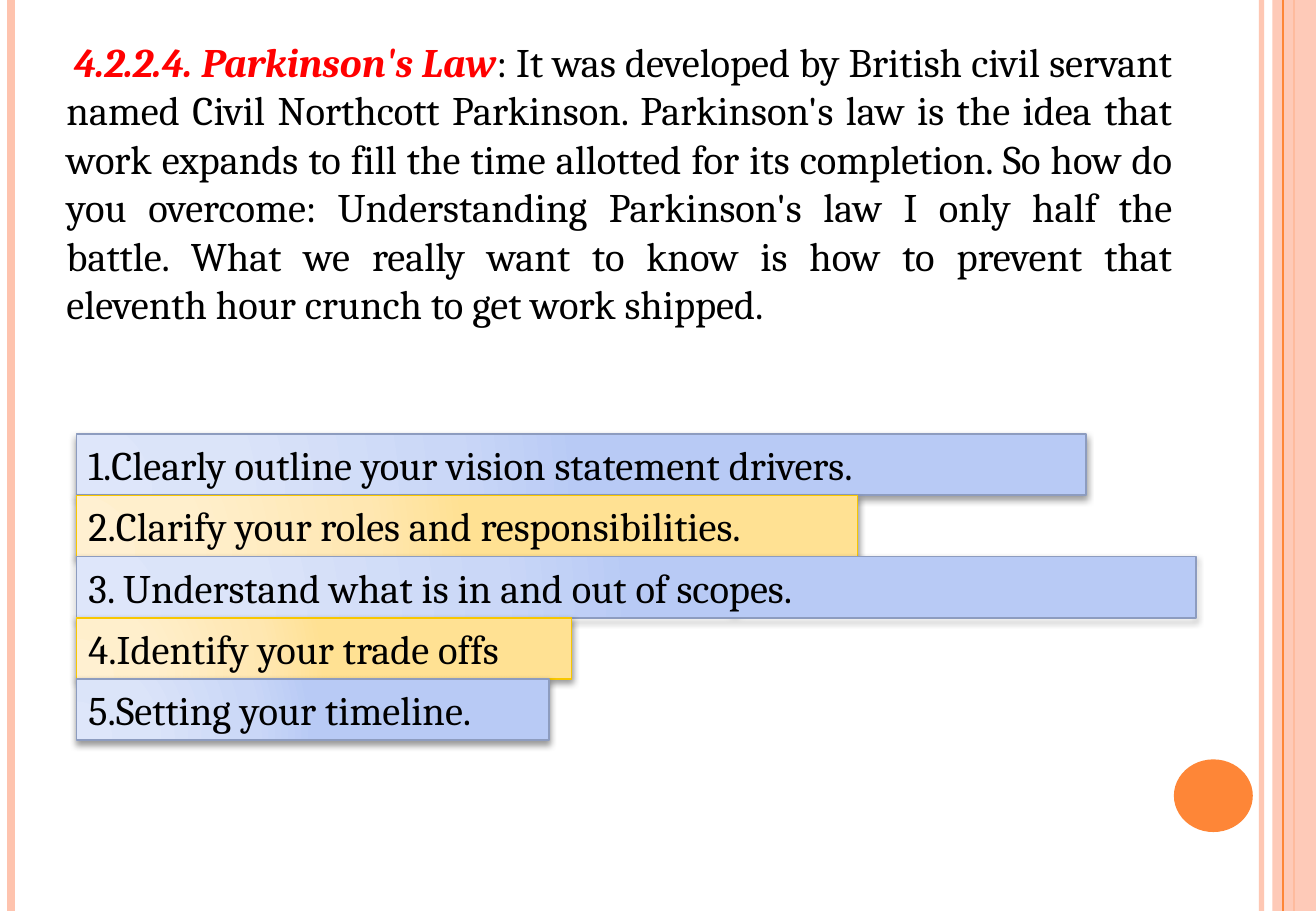
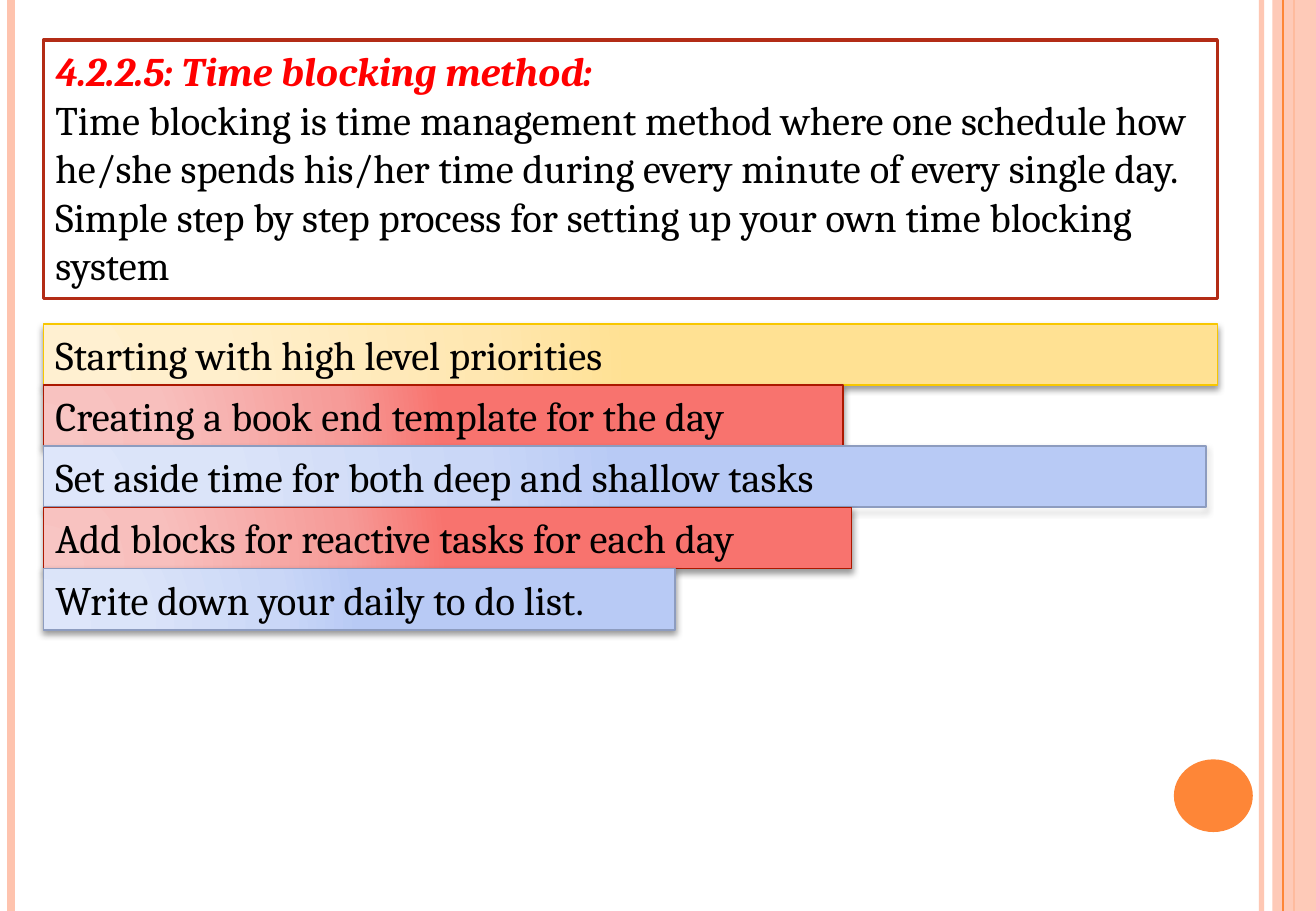
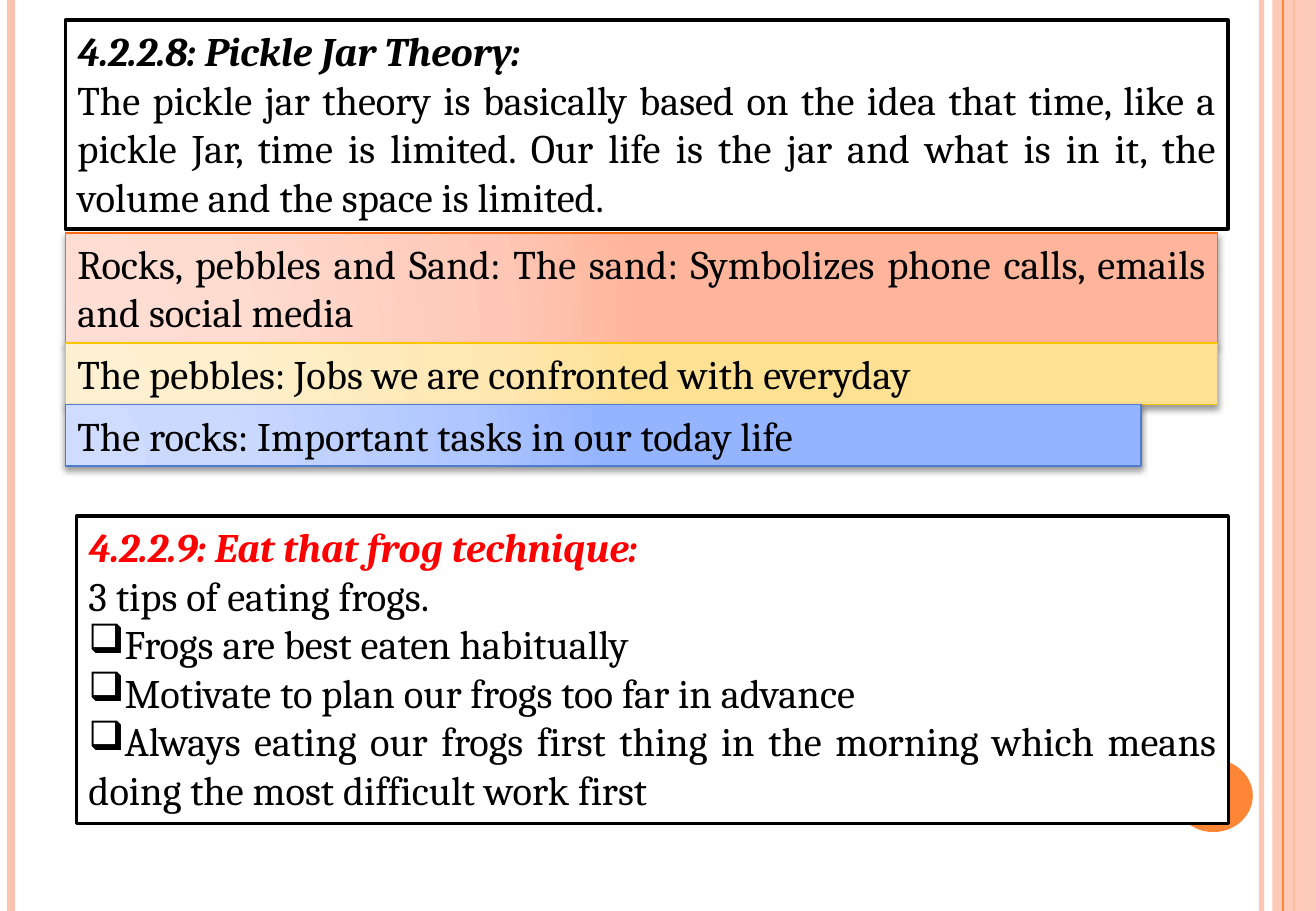
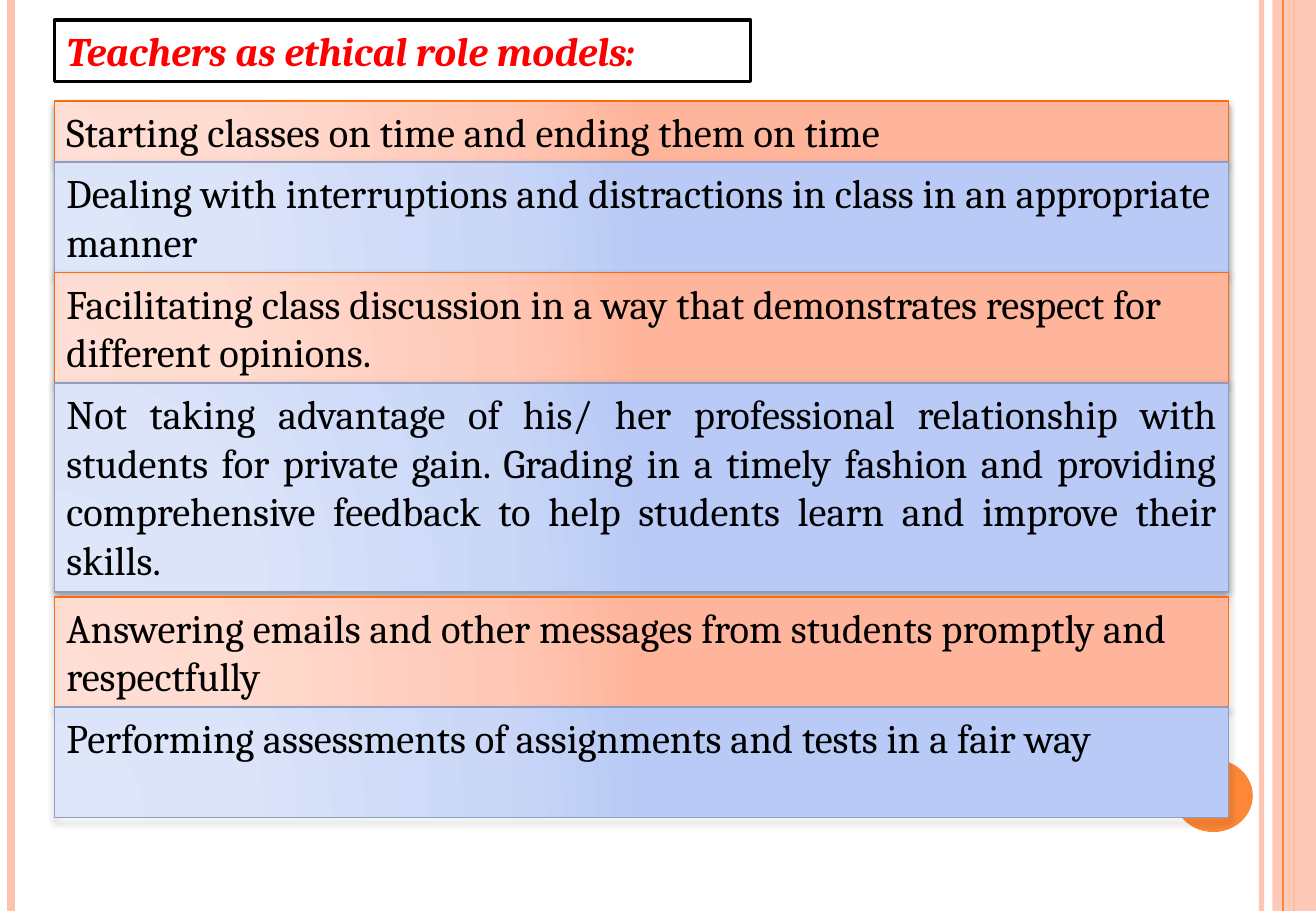
from dataclasses import dataclass

from lxml import etree
from pptx import Presentation
from pptx.dml.color import RGBColor
from pptx.enum.shapes import MSO_CONNECTOR, MSO_SHAPE
from pptx.enum.text import MSO_ANCHOR, PP_ALIGN
from pptx.oxml import parse_xml
from pptx.oxml.ns import nsdecls, qn
from pptx.util import Cm, Pt

RECT, OVAL = MSO_SHAPE.RECTANGLE, MSO_SHAPE.OVAL
STRAIGHT = MSO_CONNECTOR.STRAIGHT
TOP = MSO_ANCHOR.TOP
LEFT, JUSTIFY = PP_ALIGN.LEFT, PP_ALIGN.JUSTIFY

WIDTH, HEIGHT = 27.51, 19.05
BLANK_LAYOUT = 6
FONT, TEXT_SIZE = "Cambria", 24
BLACK, WHITE, RED, RUST = "000000", "FFFFFF", "FF0000", "B32C16"
PEACH, ACCENT = "FEC3AE", "FE8637"
STOP_POSITIONS = (0, 30, 75, 100)


@dataclass(frozen=True)
class Theme:
    stops: tuple[str, ...]
    line: str


BLUE = Theme(("DEE6FA", "DBE4F9", "CAD7F7", "B8CAF5"), "8D9CBF")
DEEP_BLUE = Theme(("CFDCFF", "CBD9FF", "AFC6FF", "95B4FF"), "4F7CCF")
YELLOW = Theme(("FFF0D1", "FFEFCC", "FFE7B1", "FFE193"), "F8C700")
CRIMSON = Theme(("F8C5C3", "F8BFBD", "F69B98", "F8736E"), "AC1800")
ORANGE = Theme(("FFDED5", "FFDBD0", "FFC8B6", "FFB59B"), "FF6B0A")


@dataclass(frozen=True)
class Run:
    text: str
    color: str = BLACK
    strong: bool = False
    size: float = TEXT_SIZE


@dataclass(frozen=True)
class Para:
    runs: tuple[Run, ...]
    align: PP_ALIGN = LEFT
    bullet: str = ""


@dataclass(frozen=True)
class Bar:
    text: str
    theme: Theme
    width: float
    lines: int = 1
    align: PP_ALIGN = LEFT
    gap: float = 0


@dataclass(frozen=True)
class Rule:
    x: float
    color: str
    weight: float
    opacity: int = 100


def rgb(color: str) -> RGBColor:
    return RGBColor.from_string(color)


def para(text: str, align: PP_ALIGN = LEFT, bullet: str = "") -> Para:
    return Para((Run(text),), align, bullet)


def heading(text: str, color: str = RED, align: PP_ALIGN = LEFT) -> Para:
    return Para((Run(text, color, True),), align)


def box_height(lines: int) -> float:
    return 0.25 + 1.03 * lines


def set_opacity(fill, percent: int) -> None:
    """Make the one solid colour inside a fill or line element see-through."""
    color = next(fill.iter(qn("a:srgbClr")))
    etree.SubElement(color, qn("a:alpha")).set("val", str(percent * 1000))


def add_rule(slide, rule: Rule) -> None:
    """Draw a full-height vertical line."""
    line = slide.shapes.add_connector(STRAIGHT, Cm(rule.x), 0, Cm(rule.x), Cm(HEIGHT))
    line.line.color.rgb = rgb(rule.color)
    line.line.width = Pt(rule.weight)
    sp_pr = line.element.spPr
    if rule.opacity < 100:
        set_opacity(sp_pr, rule.opacity)
    etree.SubElement(sp_pr, qn("a:effectLst"))


def add_plain(slide, kind, x: float, y: float, w: float, h: float, fill: str):
    sp = slide.shapes.add_shape(kind, Cm(x), Cm(y), Cm(w), Cm(h))
    sp.shadow.inherit = False
    sp.fill.solid()
    sp.fill.fore_color.rgb = rgb(fill)
    sp.line.fill.background()
    return sp


def write(tf, paras: list[Para]) -> None:
    tf.word_wrap = True
    tf.vertical_anchor = TOP
    for i, item in enumerate(paras):
        p = tf.paragraphs[0] if i == 0 else tf.add_paragraph()
        p.alignment = item.align
        if item.bullet:
            p_pr = p._p.get_or_add_pPr()
            etree.SubElement(p_pr, qn("a:buChar")).set("char", item.bullet)
        for run in item.runs:
            r = p.add_run()
            r.text = run.text
            r.font.name = FONT
            r.font.size = Pt(run.size)
            r.font.bold = r.font.italic = run.strong
            r.font.color.rgb = rgb(run.color)


def add_box(slide, x: float, y: float, w: float, lines: int, line: str,
            paras: list[Para]) -> None:
    """Draw a white outlined box tall enough for the given lines."""
    sp = add_plain(slide, RECT, x, y, w, box_height(lines), WHITE)
    sp.line.color.rgb = rgb(line)
    sp.line.width = Pt(2)
    write(sp.text_frame, paras)


def apply_theme(sp, theme: Theme) -> None:
    """Give a shape the gradient, outline and soft shadow of a theme."""
    stops = "".join(
        f'<a:gs pos="{pos * 1000}"><a:srgbClr val="{color}"/></a:gs>'
        for pos, color in zip(STOP_POSITIONS, theme.stops))
    gradient = parse_xml(
        f'<a:gradFill {nsdecls("a")} rotWithShape="1"><a:gsLst>{stops}</a:gsLst>'
        '<a:path path="circle">'
        '<a:fillToRect l="5000" t="100000" r="120000" b="10000"/>'
        '</a:path></a:gradFill>')
    shadow = parse_xml(
        f'<a:outerShdw {nsdecls("a")} blurRad="{Pt(4)}" dist="{Pt(2)}" dir="5400000" '
        f'rotWithShape="0"><a:srgbClr val="{BLACK}"><a:alpha val="40000"/></a:srgbClr>'
        '</a:outerShdw>')
    sp_pr = sp.element.spPr
    sp_pr.replace(sp_pr.find(qn("a:solidFill")), gradient)
    sp_pr.find(qn("a:effectLst")).append(shadow)
    sp.line.color.rgb = rgb(theme.line)
    sp.line.width = Pt(1)


def add_bars(slide, x: float, y: float, bars: list[Bar]) -> None:
    """Stack the bars downwards from y."""
    for bar in bars:
        y += bar.gap
        h = box_height(bar.lines)
        sp = add_plain(slide, RECT, x, y, bar.width, h, bar.theme.stops[0])
        apply_theme(sp, bar.theme)
        write(sp.text_frame, [para(bar.text, bar.align)])
        y += h


def add_frame(slide) -> None:
    """Move the side bands and the disc into the layout of the slide."""
    add_rule(slide, Rule(26.37, PEACH, 3, 93))
    add_rule(slide, Rule(0.23, PEACH, 4.5))
    add_rule(slide, Rule(27.05, ACCENT, 1.5))
    band = add_plain(slide, RECT, 26.6, 0, WIDTH - 26.6, HEIGHT, PEACH)
    set_opacity(band.element.spPr, 87)
    add_rule(slide, Rule(26.82, ACCENT, 0.75))
    add_plain(slide, OVAL, 24.54, 15.88, 1.65, 1.52, ACCENT)
    for sp in list(slide.shapes):
        slide.slide_layout.shapes.element.append(sp.element)


def parkinson_slide(slide) -> None:
    tb = slide.shapes.add_textbox(Cm(1.14), Cm(0.64), Cm(23.62), Cm(7.44))
    write(tb.text_frame, [Para((
        Run(" ", RED, True, 18),
        Run("4.2.2.4. Parkinson's Law", RED, True),
        Run(": It was developed by British civil servant named Civil Northcott "
            "Parkinson. Parkinson's law is the idea that work expands to fill the time "
            "allotted for its completion. So how do you overcome: Understanding "
            "Parkinson's law I only half the battle. What we really want to know is how "
            "to prevent that eleventh hour crunch to get work shipped."),
    ), JUSTIFY)])
    add_bars(slide, 1.6, 9.08, [
        Bar("1.Clearly outline your vision statement drivers.", BLUE, 21.1),
        Bar("2.Clarify your roles and responsibilities.", YELLOW, 16.33),
        Bar("3. Understand what is in and out of scopes.", BLUE, 23.4),
        Bar("4.Identify your trade offs", YELLOW, 10.35),
        Bar("5.Setting your timeline.", BLUE, 9.88),
    ])


def time_blocking_slide(slide) -> None:
    add_box(slide, 0.91, 0.84, 24.54, 5, RUST, [
        heading("4.2.2.5: Time blocking method:"),
        para("Time blocking is time management method where one schedule how he/she "
             "spends his/her time during every minute of every single day. Simple step "
             "by step process for setting up your own time blocking system"),
    ])
    add_bars(slide, 0.91, 6.77, [
        Bar("Starting with high level priorities", YELLOW, 24.54),
        Bar("Creating a book end template for the day", CRIMSON, 16.71),
        Bar("Set aside time for both deep and shallow tasks", BLUE, 24.3),
        Bar("Add blocks for reactive tasks for each day", CRIMSON, 16.89),
        Bar("Write down your daily to do list.", BLUE, 13.2),
    ])


def pickle_jar_slide(slide) -> None:
    add_box(slide, 1.37, 0.42, 24.3, 4, BLACK, [
        heading("4.2.2.8: Pickle Jar Theory:", BLACK),
        para("The pickle jar theory is basically based on the idea that time, like a "
             "pickle Jar, time is limited. Our life is the jar and what is in it, the "
             "volume and the space is limited.", JUSTIFY),
    ])
    add_bars(slide, 1.37, 4.87, [
        Bar("Rocks, pebbles and Sand: The sand: Symbolizes phone calls, emails and "
            "social media", ORANGE, 24.08, 2, JUSTIFY),
        Bar("The pebbles: Jobs we are confronted with everyday", YELLOW, 24.08,
            align=JUSTIFY),
        Bar("The rocks: Important tasks in our today life", DEEP_BLUE, 22.48,
            align=JUSTIFY),
    ])
    tips = ("Frogs are best eaten habitually",
            "Motivate to plan our frogs too far in advance",
            "Always eating our frogs first thing in the morning which means doing the "
            "most difficult work first")
    add_box(slide, 1.6, 10.79, 24.08, 6, BLACK, [
        heading("4.2.2.9: Eat that frog technique:", align=JUSTIFY),
        para("3 tips of eating frogs.", JUSTIFY),
        *(para(tip, JUSTIFY, "❑") for tip in tips),
    ])


def role_models_slide(slide) -> None:
    add_box(slide, 1.14, 0.42, 14.55, 1, BLACK,
            [heading("Teachers as ethical role models:")])
    w = 24.54
    add_bars(slide, 1.14, 2.11, [
        Bar("Starting classes on time and ending them on time", ORANGE, w),
        Bar("Dealing with interruptions and distractions in class in an appropriate "
            "manner", BLUE, w, 2),
        Bar("Facilitating class discussion in a way that demonstrates respect for "
            "different opinions.", ORANGE, w, 2),
        Bar("Not taking advantage of his/ her professional relationship with students "
            "for private gain. Grading in a timely fashion and providing comprehensive "
            "feedback to help students learn and improve their skills.", BLUE, w, 4,
            JUSTIFY),
        Bar("Answering emails and other messages from students promptly and "
            "respectfully", ORANGE, w, 2, gap=0.1),
        Bar("Performing assessments of assignments and tests in a fair way", BLUE, w, 2),
    ])


def main() -> None:
    prs = Presentation()
    prs.slide_width, prs.slide_height = Cm(WIDTH), Cm(HEIGHT)
    layout = prs.slide_layouts[BLANK_LAYOUT]
    builders = (parkinson_slide, time_blocking_slide, pickle_jar_slide, role_models_slide)
    for i, build in enumerate(builders):
        slide = prs.slides.add_slide(layout)
        if i == 0:
            add_frame(slide)
        build(slide)
    prs.save("out.pptx")


if __name__ == "__main__":
    main()
